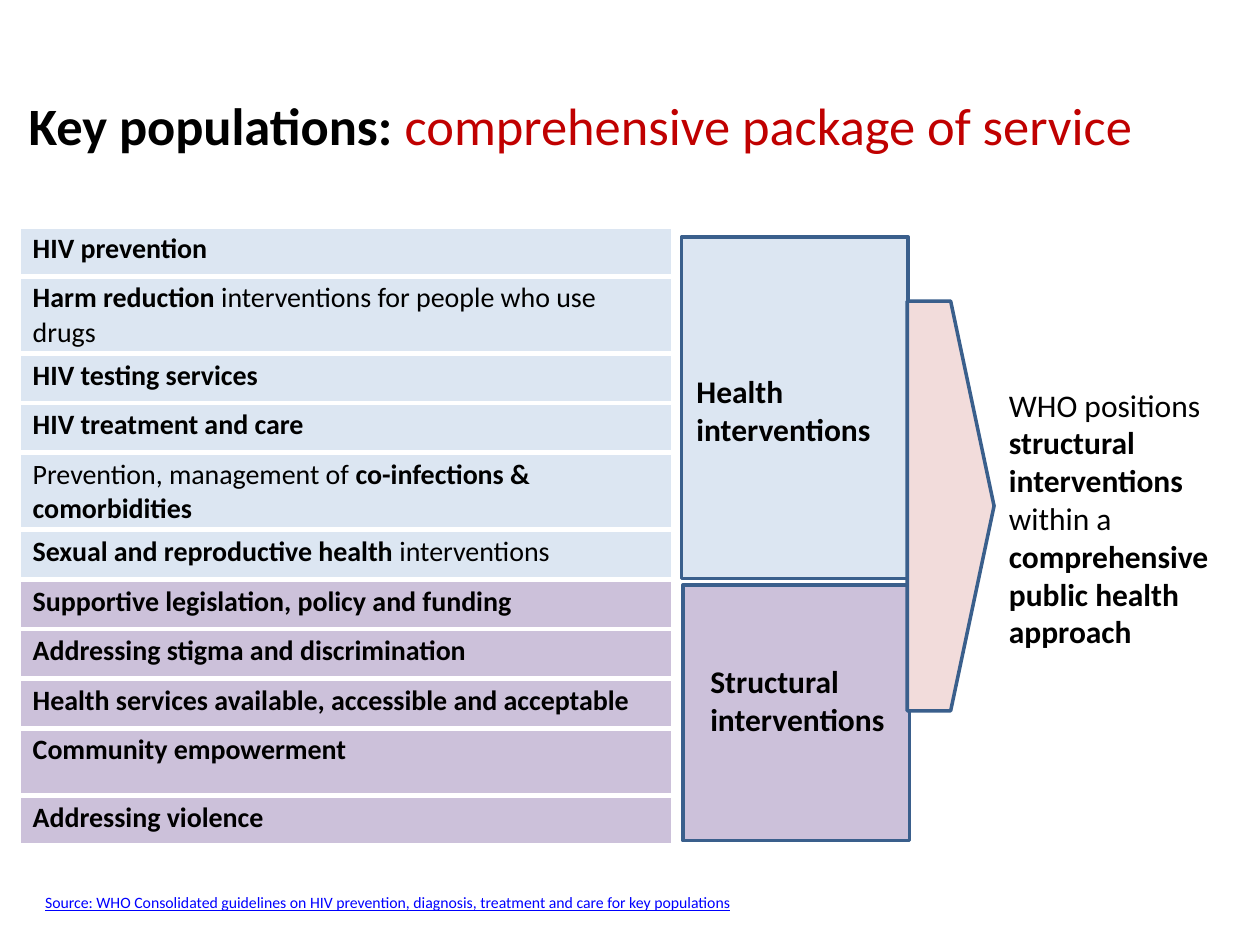
import collections

import pptx
import pptx.dml.color
import pptx.enum.shapes
import pptx.enum.text
import pptx.oxml
import pptx.oxml.ns
import pptx.util

Cm = pptx.util.Cm
Pt = pptx.util.Pt
Shape = pptx.enum.shapes.MSO_SHAPE
Anchor = pptx.enum.text.MSO_ANCHOR
Box = collections.namedtuple("Box", "left top width height")  # centimetres

BLUE, PURPLE, PINK = "DCE6F2", "CCC1DA", "F2DCDB"
OUTLINE, RED, LINK = "3A5F8C", "C00000", "0000FF"

# Each service is a list of (text, bold) runs
HEALTH_SERVICES = [
    [("HIV prevention", True)],
    [("Harm reduction ", True), ("interventions for people who use drugs", False)],
    [("HIV testing services", True)],
    [("HIV treatment and care", True)],
    [("Prevention, management of ", False), ("co-infections & comorbidities", True)],
    [("Sexual and reproductive health ", True), ("interventions", False)],
]
STRUCTURAL_SERVICES = [
    [("Supportive legislation, policy and funding", True)],
    [("Addressing stigma and discrimination", True)],
    [("Health services available, accessible and acceptable", True)],
    [("Community empowerment", True)],
    [("Addressing violence", True)],
]
ROW_HEIGHT, TALL_ROW_HEIGHT, TALL_ROW = 1.0, 1.36, 9


def color(value):
    return pptx.dml.color.RGBColor.from_string(value)


def lengths(box):
    return [Cm(value) for value in box]


def inside(box, left, top, width, height):
    """Place a box relative to the corner of another one."""
    return Box(box.left + left, box.top + top, width, height)


def write(frame, paragraphs, size=18, ink="000000", underline=None):
    """Fill a text frame with paragraphs of (text, bold[, ink]) runs."""
    for index, runs in enumerate(paragraphs):
        para = frame.paragraphs[0] if index == 0 else frame.add_paragraph()
        for text, bold, *own_ink in runs:
            span = para.add_run()
            span.text = text
            span.font.name = "Calibri"
            span.font.size = Pt(size)
            span.font.bold = bold
            span.font.underline = underline
            span.font.color.rgb = color(own_ink[0] if own_ink else ink)


def add_text(page, box, paragraphs, anchor=Anchor.TOP, wrap=True, **text_format):
    frame = page.shapes.add_textbox(*lengths(box)).text_frame
    frame.word_wrap = wrap
    frame.vertical_anchor = anchor
    write(frame, paragraphs, **text_format)


def add_panel(page, kind, box, fill):
    panel = page.shapes.add_shape(kind, *lengths(box))
    panel.shadow.inherit = False
    panel.fill.solid()
    panel.fill.fore_color.rgb = color(fill)
    panel.line.color.rgb = color(OUTLINE)
    panel.line.width = Pt(2)


def add_white_borders(cell):
    """Draw the right, top and bottom edges, which separate the rows."""
    properties = cell._tc.get_or_add_tcPr()
    for position, edge in enumerate(("lnR", "lnT", "lnB")):
        properties.insert(position, pptx.oxml.parse_xml(
            f'<a:{edge} {pptx.oxml.ns.nsdecls("a")} w="{Pt(3)}"><a:solidFill>'
            f'<a:srgbClr val="FFFFFF"/></a:solidFill></a:{edge}>'))


def add_title(page, box):
    add_text(page, box, [[("Key populations: ", True),
                          ("comprehensive package of service", False, RED)]],
             anchor=Anchor.MIDDLE, size=30)


def add_service_table(page, box):
    services = HEALTH_SERVICES + STRUCTURAL_SERVICES
    table = page.shapes.add_table(len(services), 1, *lengths(box)).table
    table.first_row = table.horz_banding = False
    for index, runs in enumerate(services):
        height = TALL_ROW_HEIGHT if index == TALL_ROW else ROW_HEIGHT
        table.rows[index].height = Cm(height)
        cell = table.cell(index, 0)
        cell.margin_left = cell.margin_right = Cm(0.25)
        cell.margin_top = cell.margin_bottom = Cm(0.1)
        cell.fill.solid()
        cell.fill.fore_color.rgb = color(BLUE if index < len(HEALTH_SERVICES) else PURPLE)
        add_white_borders(cell)
        write(cell.text_frame, [runs], size=16)


def add_intervention_groups(page, box):
    # Structural group below, health group above
    add_panel(page, Shape.RECTANGLE, inside(box, 0.03, 7.01, 4.57, 5.16), PURPLE)
    add_panel(page, Shape.RECTANGLE, inside(box, 0, 0, 4.57, 6.88), BLUE)
    add_text(page, inside(box, 0.05, 2.59, 4.85, 1.8),
             [[("Health interventions", True)]])
    add_text(page, inside(box, 0.33, 8.45, 4.04, 1.8),
             [[("Structural", True)], [("interventions", True)]], wrap=False)


def add_conclusion(page, box):
    # Arrow out of the two groups, then the statement
    add_panel(page, Shape.PENTAGON, inside(box, 0, 0, 1.75, box.height), PINK)
    add_text(page, inside(box, 1.8, 1.58, 4.6, 5.64), [
        [("WHO positions", False)],
        [("structural interventions ", True), ("within a ", False),
         ("comprehensive public health approach", True)],
    ])


def add_source(page, box):
    add_text(page, box, [[(
        "Source: WHO Consolidated guidelines on HIV prevention, diagnosis, "
        "treatment and care for key populations", False)]],
        size=9, ink=LINK, underline=True)


def main():
    deck = pptx.Presentation()
    deck.slide_width, deck.slide_height = Cm(25.4), Cm(19.05)
    page = deck.slides.add_slide(deck.slide_layouts[6])
    add_title(page, Box(0.33, 1.12, 23.98, 2.79))
    add_intervention_groups(page, Box(13.74, 4.78, 4.6, 12.17))
    add_service_table(page, Box(0.41, 4.57, 13.16, 11.36))
    add_conclusion(page, Box(18.29, 6.07, 6.4, 8.26))
    add_source(page, Box(0.66, 17.88, 15.6, 0.64))
    deck.save("out.pptx")


if __name__ == "__main__":
    main()
